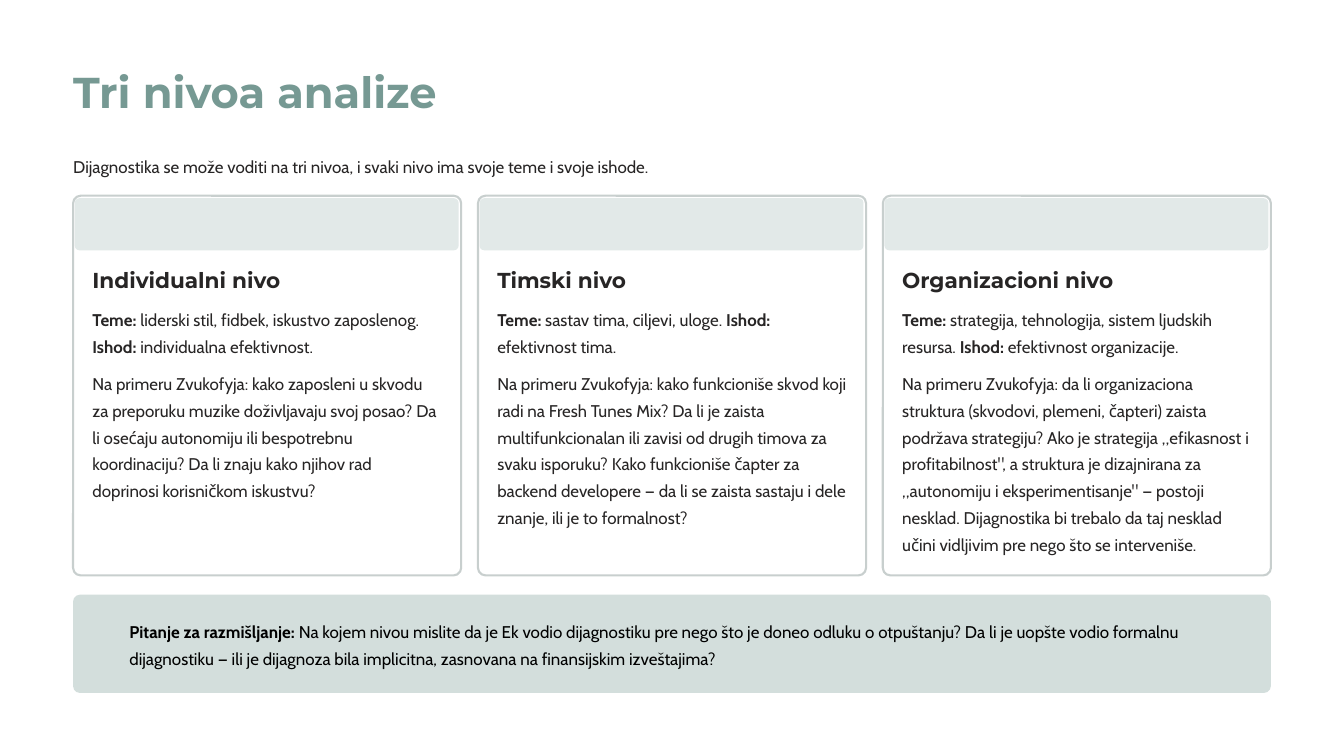
from dataclasses import dataclass

from lxml import etree
from pptx import Presentation
from pptx.dml.color import RGBColor
from pptx.enum import shapes, text
from pptx.oxml import ns
from pptx.shapes.autoshape import Shape
from pptx.slide import Slide
from pptx.text.text import TextFrame
from pptx.util import Inches, Pt

HUES = {
    "title": "769993",
    "ink": "272525",
    "black": "000000",
    "card": "FFFFFF",
    "edge": "C8CFCE",
    "band": "E2E9E8",
    "note": "D3DEDC",
}
LEFT, WIDTH = 0.87, 14.26
TOP, STEP = 2.33, 4.82


@dataclass(frozen=True)
class Box:
    left: float
    top: float
    width: float
    height: float

    def emu(self) -> tuple[int, int, int, int]:
        return (Inches(self.left), Inches(self.top),
                Inches(self.width), Inches(self.height))


@dataclass(frozen=True)
class Run:
    words: str
    bold: bool = False


@dataclass(frozen=True)
class Style:
    size: float
    face: str = "Cabin"
    hue: str = "ink"
    lead: float = 23


@dataclass(frozen=True)
class Level:
    name: str
    themes: str
    result: str
    case: str


BODY = Style(14.5)
HEAD = Style(18.5, "Montserrat")
LEVELS = [
    Level(
        "Individualni nivo",
        " liderski stil, fidbek, iskustvo zaposlenog. ",
        " individualna efektivnost.",
        "Na primeru Zvukofyja: kako zaposleni u skvodu za preporuku muzike "
        "doživljavaju svoj posao? Da li osećaju autonomiju ili bespotrebnu "
        "koordinaciju? Da li znaju kako njihov rad doprinosi korisničkom iskustvu?",
    ),
    Level(
        "Timski nivo",
        " sastav tima, ciljevi, uloge. ",
        " efektivnost tima.",
        "Na primeru Zvukofyja: kako funkcioniše skvod koji radi na Fresh Tunes Mix? "
        "Da li je zaista multifunkcionalan ili zavisi od drugih timova za svaku "
        "isporuku? Kako funkcioniše čapter za backend developere — da li se zaista "
        "sastaju i dele znanje, ili je to formalnost?",
    ),
    Level(
        "Organizacioni nivo",
        " strategija, tehnologija, sistem ljudskih resursa. ",
        " efektivnost organizacije.",
        "Na primeru Zvukofyja: da li organizaciona struktura (skvodovi, plemeni, "
        "čapteri) zaista podržava strategiju? Ako je strategija „efikasnost i "
        "profitabilnost\", a struktura je dizajnirana za „autonomiju i "
        "eksperimentisanje\" — postoji nesklad. Dijagnostika bi trebalo da taj "
        "nesklad učini vidljivim pre nego što se interveniše.",
    ),
]


def tint(hue: str) -> RGBColor:
    return RGBColor.from_string(HUES[hue])


def write(frame: TextFrame, runs: list[Run], style: Style) -> None:
    frame.margin_left = frame.margin_right = 0
    frame.margin_top = frame.margin_bottom = 0
    frame.word_wrap = True
    frame.auto_size = text.MSO_AUTO_SIZE.NONE
    frame.vertical_anchor = text.MSO_ANCHOR.TOP
    para = frame.paragraphs[0]
    para.alignment = text.PP_ALIGN.LEFT
    para.line_spacing = Pt(style.lead)
    para.space_before = Pt(0)
    for item in runs:
        run = para.add_run()
        run.text = item.words
        run.font.name = style.face
        run.font.size = Pt(style.size)
        run.font.bold = item.bold
        run.font.color.rgb = tint(style.hue)


def label(slide: Slide, box: Box, runs: list[Run], style: Style) -> None:
    write(slide.shapes.add_textbox(*box.emu()).text_frame, runs, style)


def fill(holder: Shape, box: Box, runs: list[Run], style: Style) -> None:
    holder.left, holder.top, holder.width, holder.height = box.emu()
    write(holder.text_frame, runs, style)


def panel(slide: Slide, box: Box, hue: str, curve: float, edge: str = "") -> None:
    shape = slide.shapes.add_shape(
        shapes.MSO_SHAPE.ROUNDED_RECTANGLE, *box.emu())
    shape.adjustments[0] = curve
    shape.shadow.inherit = False
    shape.fill.solid()
    shape.fill.fore_color.rgb = tint(hue)
    if edge:
        shape.line.color.rgb = tint(edge)
        shape.line.width = Pt(1.8)
    else:
        shape.line.fill.background()


def card(slide: Slide, left: float, level: Level) -> None:
    panel(slide, Box(left, TOP, 4.62, 4.52), "card", 0.02, "edge")
    panel(slide, Box(left + 0.02, TOP + 0.03, 4.57, 0.62), "band", 0.09)
    inner = left + 0.23
    label(slide, Box(inner, 3.17, 4.16, 0.32), [Run(level.name, True)], HEAD)
    label(slide, Box(inner, 3.61, 4.16, 0.64), [
        Run("Teme:", True), Run(level.themes),
        Run("Ishod:", True), Run(level.result),
    ], BODY)
    label(slide, Box(inner, 4.37, 4.16, 2.25), [Run(level.case)], BODY)


def main() -> None:
    deck = Presentation()
    deck.slide_width, deck.slide_height = Inches(16), Inches(9)
    slide = deck.slides.add_slide(deck.slide_layouts[1])
    fill(slide.shapes.title, Box(LEFT, 0.75, WIDTH, 0.64),
         [Run("Tri nivoa analize", True)], Style(37, "Montserrat", "title", 46))

    intro = slide.placeholders[1]
    props = intro.text_frame.paragraphs[0]._p.get_or_add_pPr()
    props.set("marL", "0")
    props.set("indent", "0")
    etree.SubElement(props, ns.qn("a:buNone"))
    fill(intro, Box(LEFT, 1.79, WIDTH, 0.32), [Run(
        "Dijagnostika se može voditi na tri nivoa, i svaki nivo ima svoje teme "
        "i svoje ishode.")], BODY)

    for spot, level in enumerate(LEVELS):
        card(slide, LEFT + spot * STEP, level)

    panel(slide, Box(LEFT, 7.08, WIDTH, 1.17), "note", 0.07)
    label(slide, Box(1.54, 7.32, 13.39, 0.64), [
        Run("Pitanje za razmišljanje:", True),
        Run(" Na kojem nivou mislite da je Ek vodio dijagnostiku pre nego što je "
            "doneo odluku o otpuštanju? Da li je uopšte vodio formalnu "
            "dijagnostiku — ili je dijagnoza bila implicitna, zasnovana na "
            "finansijskim izveštajima?"),
    ], Style(14.5, hue="black"))
    deck.save("out.pptx")


if __name__ == "__main__":
    main()
